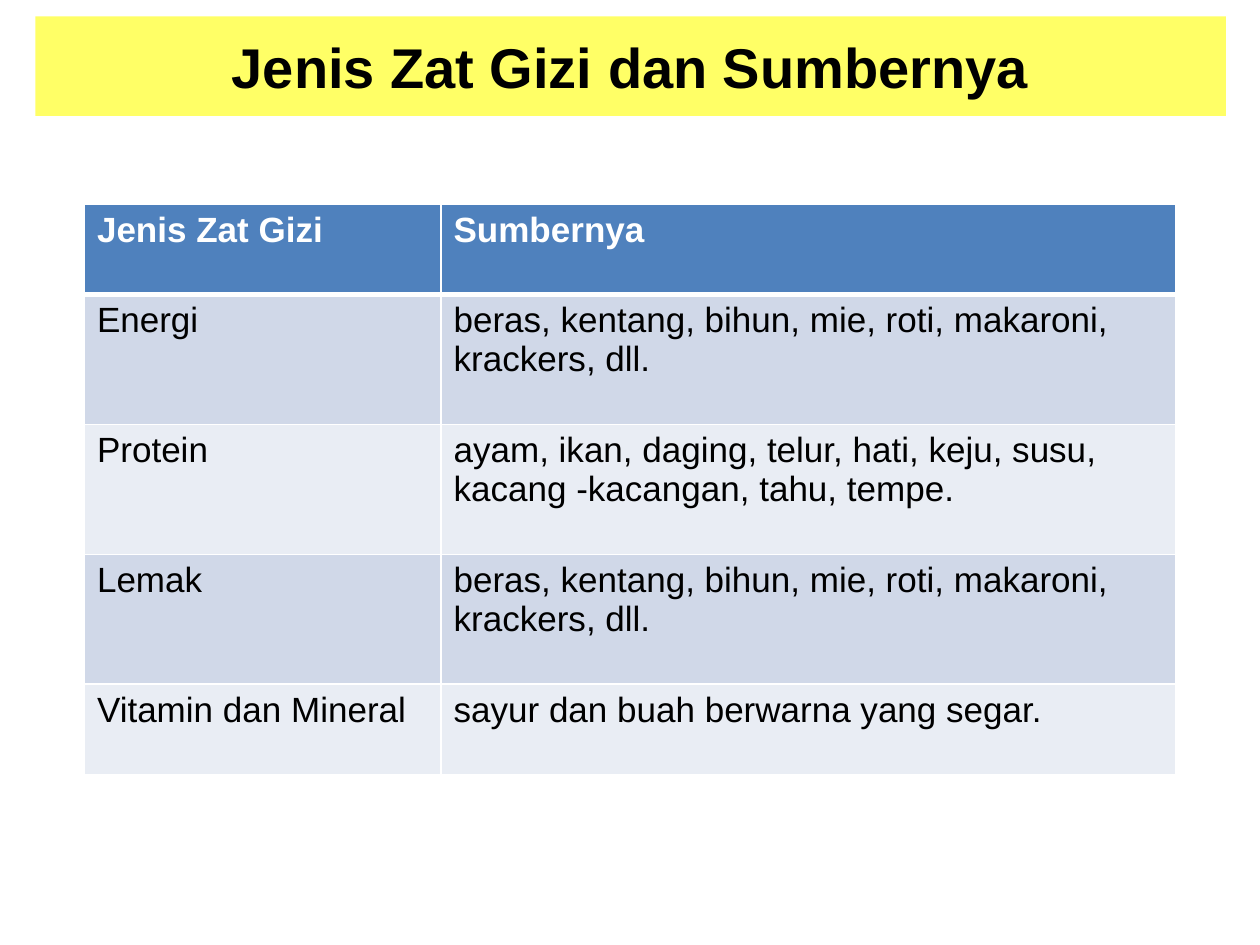
import pptx
import pptx.util
import pptx.dml.color
import pptx.enum.text
import pptx.oxml

RGBColor = pptx.dml.color.RGBColor
YELLOW = RGBColor(0xFF, 0xFF, 0x66)
BLUE = RGBColor(0x4F, 0x81, 0xBD)
BAND_DARK = RGBColor(0xD0, 0xD8, 0xE8)
BAND_LIGHT = RGBColor(0xE9, 0xED, 0xF4)
WHITE = RGBColor(0xFF, 0xFF, 0xFF)
BLACK = RGBColor(0x00, 0x00, 0x00)

ROWS = [
    ("Jenis Zat Gizi", "Sumbernya"),
    ("Energi", "beras, kentang, bihun, mie, roti, makaroni, krackers, dll."),
    ("Protein", "ayam, ikan, daging, telur, hati, keju, susu, kacang -kacangan, tahu, tempe."),
    ("Lemak", "beras, kentang, bihun, mie, roti, makaroni, krackers, dll."),
    ("Vitamin dan Mineral", "sayur dan buah berwarna yang segar."),
]
SLIDE_WIDTH, SLIDE_HEIGHT = 10, 7.5
SHORT_ROW, TALL_ROW = 0.72 / SLIDE_HEIGHT, 1.03 / SLIDE_HEIGHT


class Deck:
    """Holds the style and the current slide; lengths are shares of the slide."""

    font = "Arial"

    def __init__(self, width, height):
        self.prs = pptx.Presentation()
        self.prs.slide_width = pptx.util.Inches(width)
        self.prs.slide_height = pptx.util.Inches(height)
        self.s = self.prs.slides.add_slide(self.prs.slide_layouts[5])

    def x(self, share):
        return round(self.prs.slide_width * share)

    def y(self, share):
        return round(self.prs.slide_height * share)

    def box(self, left, top, width, height):
        return self.x(left), self.y(top), self.x(width), self.y(height)

    def text(self, tf, text, size, color, bold):
        r = tf.paragraphs[0].add_run()
        r.text = text
        style = {"name": self.font, "size": pptx.util.Pt(size), "bold": bold}
        for key, value in style.items():
            setattr(r.font, key, value)
        r.font.color.rgb = color

    def title(self, text, box):
        sp = self.s.shapes.title
        for key, value in zip(("left", "top", "width", "height"), self.box(*box)):
            setattr(sp, key, value)
        sp.fill.solid()
        sp.fill.fore_color.rgb = YELLOW
        tf = sp.text_frame
        tf.vertical_anchor = pptx.enum.text.MSO_ANCHOR.MIDDLE
        tf.paragraphs[0].alignment = pptx.enum.text.PP_ALIGN.CENTER
        self.text(tf, text, 32, BLACK, True)

    def border(self, cell, side, points):
        line = pptx.oxml.parse_xml(
            '<a:%s xmlns:a="http://schemas.openxmlformats.org/drawingml/2006/main" w="%d">'
            '<a:solidFill><a:srgbClr val="%s"/></a:solidFill></a:%s>'
            % (side, pptx.util.Pt(points), WHITE, side))
        cell._tc.get_or_add_tcPr().append(line)

    def cell(self, cell, text, row):
        header = row == 0
        for side in ("lnL", "lnR", "lnT", "lnB"):
            heavy = (row, side) in ((0, "lnB"), (1, "lnT"))
            self.border(cell, side, 3 if heavy else 1)
        cell.fill.solid()
        cell.fill.fore_color.rgb = BLUE if header else (BAND_LIGHT, BAND_DARK)[row % 2]
        self.text(cell.text_frame, text, 20, WHITE if header else BLACK, header)

    def table(self, rows, left, top, widths, heights):
        box = self.box(left, top, sum(widths), sum(heights))
        table = self.s.shapes.add_table(len(rows), len(widths), *box).table
        for column, width in zip(table.columns, widths):
            column.width = self.x(width)
        for i, (values, height) in enumerate(zip(rows, heights)):
            table.rows[i].height = self.y(height)
            for j, text in enumerate(values):
                self.cell(table.cell(i, j), text, i)


def main():
    deck = Deck(SLIDE_WIDTH, SLIDE_HEIGHT)
    title_box = (0.28 / SLIDE_WIDTH, 0.13 / SLIDE_HEIGHT,
                 9.45 / SLIDE_WIDTH, 0.79 / SLIDE_HEIGHT)
    deck.title("Jenis Zat Gizi dan Sumbernya", title_box)
    widths = (2.83 / SLIDE_WIDTH, 5.83 / SLIDE_WIDTH)
    heights = [SHORT_ROW, *[TALL_ROW] * 3, SHORT_ROW]
    deck.table(ROWS, 0.67 / SLIDE_WIDTH, 1.62 / SLIDE_HEIGHT, widths, heights)
    deck.prs.save("out.pptx")


if __name__ == "__main__":
    main()
